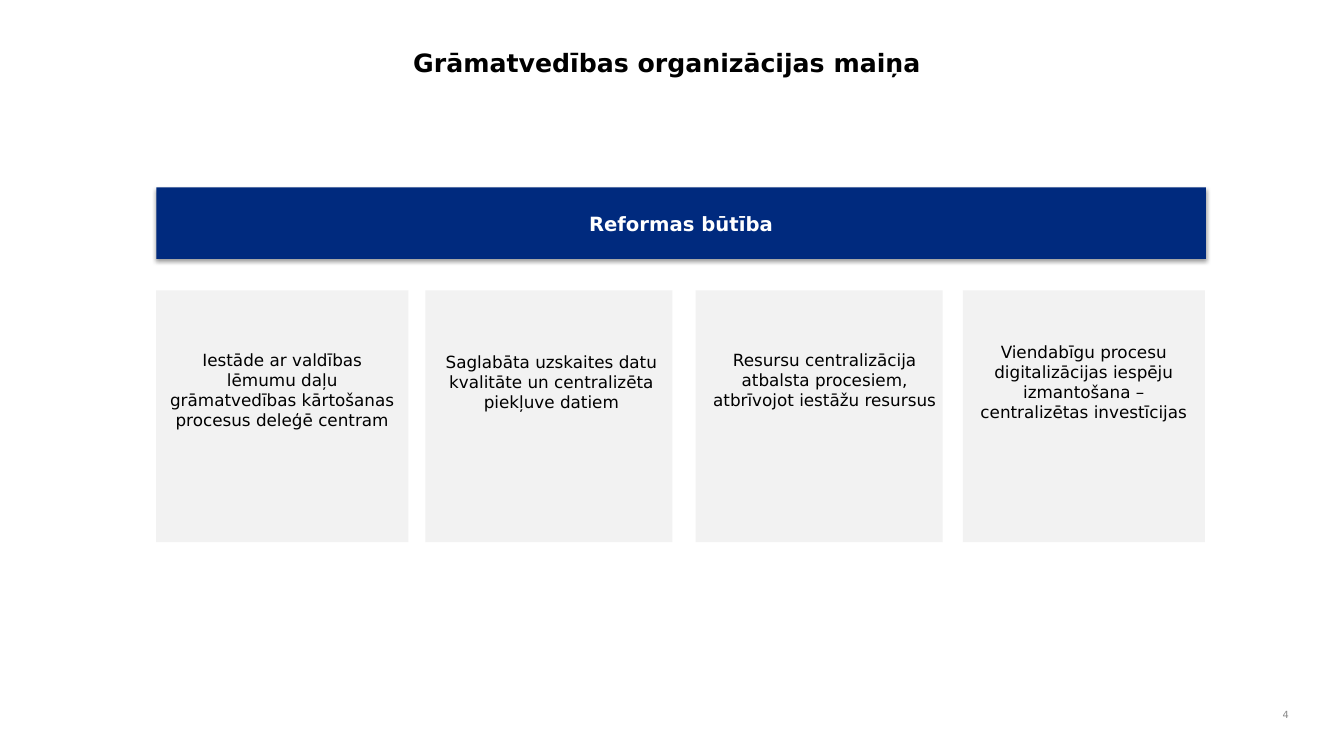
from lxml import etree
from pptx import Presentation
from pptx.dml.color import RGBColor
from pptx.enum.shapes import MSO_SHAPE
from pptx.enum.text import MSO_ANCHOR, PP_ALIGN
from pptx.oxml.ns import nsdecls
from pptx.util import Inches, Pt

COLORS = {"navy": "002A7E", "panel": "F2F2F2", "black": "000000",
          "white": "FFFFFF", "gray": "898989"}
FONT = "DejaVu Sans"

prs = Presentation()
prs.slide_width, prs.slide_height = Inches(13.33), Inches(7.5)
slide = prs.slides.add_slide(prs.slide_layouts[6])


def write(shape, text, size, color, bold=False, align=PP_ALIGN.CENTER,
          anchor=MSO_ANCHOR.TOP):
    frame = shape.text_frame
    frame.word_wrap = True
    frame.vertical_anchor = anchor
    paragraph = frame.paragraphs[0]
    paragraph.text = text
    paragraph.alignment = align
    paragraph.font.name = FONT
    paragraph.font.size = Pt(size)
    paragraph.font.bold = bold
    paragraph.font.color.rgb = RGBColor.from_string(COLORS[color])


def add_rectangle(left, top, width, height, color):
    rectangle = slide.shapes.add_shape(
        MSO_SHAPE.RECTANGLE, Inches(left), Inches(top), Inches(width), Inches(height))
    rectangle.fill.solid()
    rectangle.fill.fore_color.rgb = RGBColor.from_string(COLORS[color])
    rectangle.line.fill.background()
    rectangle.shadow.inherit = False
    return rectangle


# Title
title = slide.shapes.add_textbox(Inches(2.68), Inches(0.42), Inches(7.87), Inches(1.13))
write(title, "Grāmatvedības organizācijas maiņa", 18, "black", bold=True)

# Banner with a soft shadow below
banner = add_rectangle(1.55, 1.86, 10.41, 0.71, "navy")
write(banner, "Reformas būtība", 14, "white", bold=True, anchor=MSO_ANCHOR.MIDDLE)
effects = banner._element.spPr.find("{*}effectLst")
effects.append(etree.fromstring(
    f'<a:outerShdw {nsdecls("a")} blurRad="{Pt(3.1)}" dist="{Pt(1.6)}" dir="5400000" '
    f'rotWithShape="0"><a:srgbClr val="{COLORS["black"]}"><a:alpha val="38000"/>'
    '</a:srgbClr></a:outerShdw>'))

# Four pillars: panel left and width, text left, top and height, wording
pillars = [
    (1.55, 2.5, 1.55, 3.42, 1.31,
     "Iestāde ar valdības lēmumu daļu grāmatvedības kārtošanas procesus deleģē centram"),
    (4.22, 2.45, 4.22, 3.44, 1.11,
     "Saglabāta uzskaites datu kvalitāte un centralizēta piekļuve datiem"),
    (6.9, 2.45, 6.93, 3.42, 1.11,
     "Resursu centralizācija atbalsta procesiem, atbrīvojot iestāžu resursus"),
    (9.55, 2.4, 9.5, 3.34, 1.31,
     "Viendabīgu procesu digitalizācijas iespēju izmantošana – centralizētas investīcijas"),
]
for panel_left, panel_width, text_left, text_top, text_height, wording in pillars:
    add_rectangle(panel_left, 2.88, panel_width, 2.5, "panel")
    description = slide.shapes.add_textbox(
        Inches(text_left), Inches(text_top), Inches(2.5), Inches(text_height))
    write(description, wording, 12, "black")

# Page number
page_number = slide.shapes.add_textbox(Inches(12.44), Inches(6.92), Inches(0.44), Inches(0.33))
write(page_number, "4", 7, "gray", align=PP_ALIGN.RIGHT, anchor=MSO_ANCHOR.MIDDLE)

prs.save("out.pptx")
